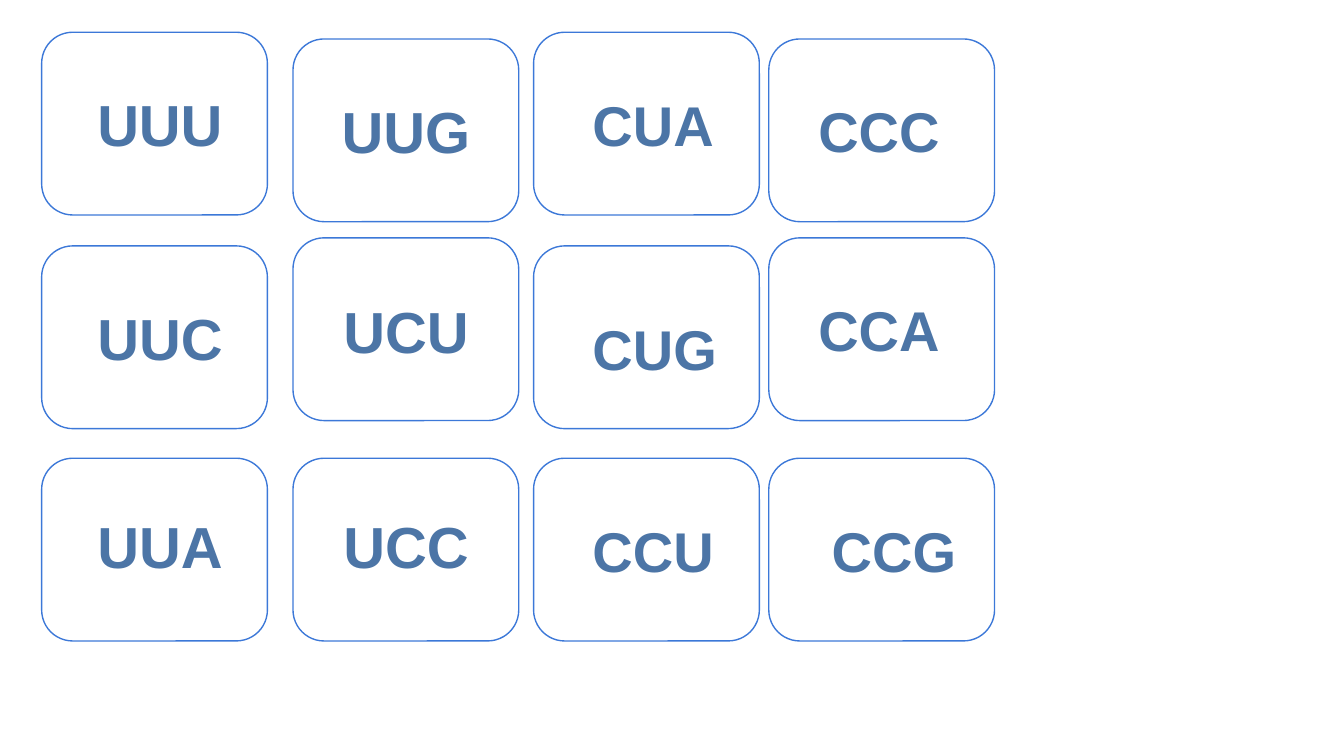
import pptx
import pptx.util
import pptx.dml.color
import pptx.enum.shapes
import pptx.enum.text

PX = 4572


def px(*vals):
    return [pptx.util.Emu(val * PX) for val in vals]


def color(code):
    return pptx.dml.color.RGBColor.from_string(code)


deck = pptx.Presentation()
deck.slide_width, deck.slide_height = px(2000, 1125)
slide = deck.slides.add_slide(deck.slide_layouts[6])

ALIGN = pptx.enum.text.PP_ALIGN
ANCHOR = pptx.enum.text.MSO_ANCHOR
FIT = pptx.enum.text.MSO_AUTO_SIZE
ROUND = pptx.enum.shapes.MSO_SHAPE.ROUNDED_RECTANGLE

odd = [48, 366, 682]
even = [58, 354, 682]
mid = (31, ALIGN.CENTER, ANCHOR.MIDDLE, FIT.NONE)
top = (30, ALIGN.LEFT, ANCHOR.TOP, FIT.SHAPE_TO_FIT_TEXT)
low = (656, 112)
tall = (656, 142)

columns = [
    (62, odd, mid, [("UUU", 112, 122, (252, 124)),
                    ("UUC", -90, 446, low), ("UUA", -90, 756, low)]),
    (436, even, mid, [("UUG", 276, 138, low),
                      ("UCU", 276, 436, low), ("UCC", 276, 756, low)]),
    (794, odd, top, [("CUA", 862, 114, tall),
                     ("CUG", 862, 448, tall), ("CCU", 862, 748, tall)]),
    (1144, even, top, [("CCC", 1198, 124, tall),
                       ("CCA", 1198, 420, tall), ("CCG", 1218, 748, tall)]),
]

for left, rows, style, codons in columns:
    size, align, anchor, fit = style
    for row in rows:
        card = slide.shapes.add_shape(ROUND, *px(left, row, 336, 272))
        card.shadow.inherit = False
        card.adjustments[0] = 0.17
        card.fill.solid()
        card.fill.fore_color.rgb = color("FFFFFF")
        card.line.color.rgb = color("3C78D8")
        card.line.width = pptx.util.Pt(0.75)

    for codon, x, y, area in codons:
        label = slide.shapes.add_textbox(*px(x, y, *area))
        frame = label.text_frame
        frame.text = codon
        frame.word_wrap = True
        frame.auto_size = fit
        frame.vertical_anchor = anchor
        frame.margin_left, frame.margin_right = px(20, 20)
        frame.margin_top, frame.margin_bottom = px(20, 20)
        line = frame.paragraphs[0]
        line.alignment = align
        font = line.runs[0].font
        font.name = "Arial"
        font.size = pptx.util.Pt(size)
        font.bold = True
        font.color.rgb = color("4C75A6")

deck.save("out.pptx")
